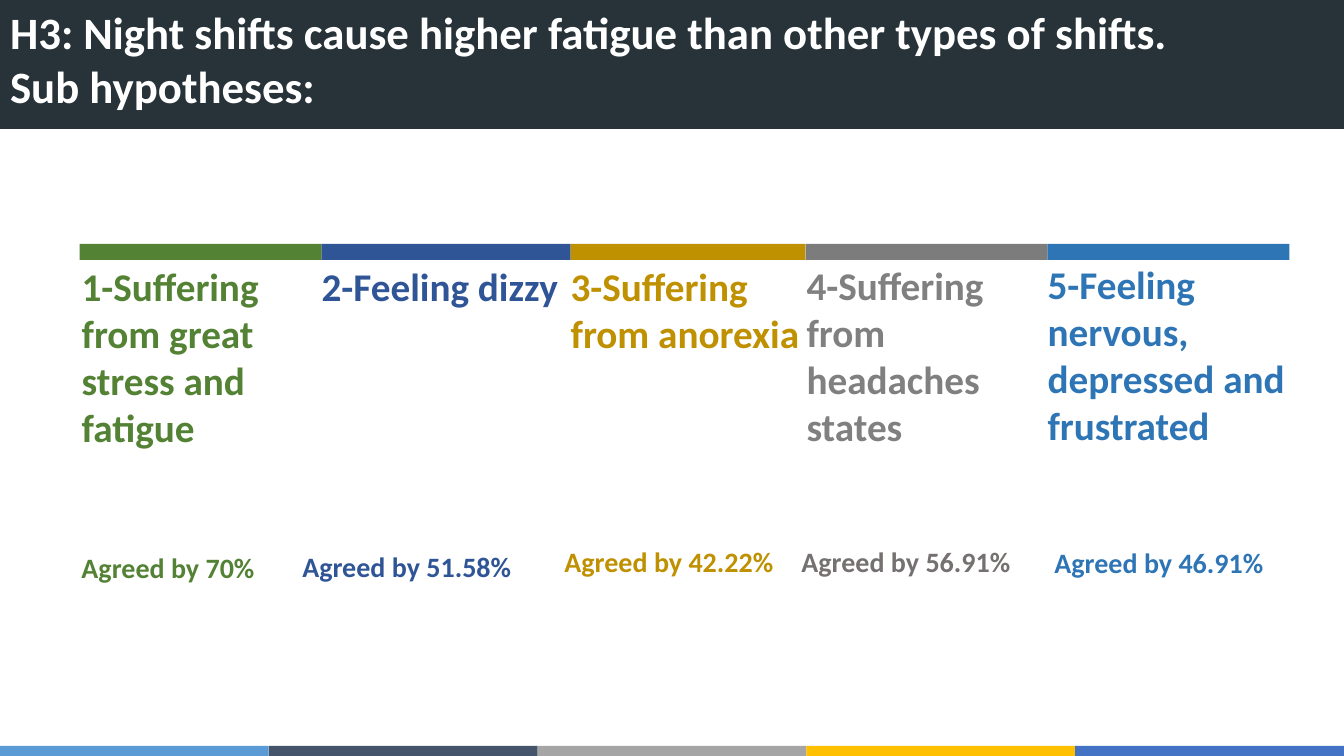
"""Build the slide on night-shift fatigue and its five sub hypotheses."""
import dataclasses
import itertools

import pptx
import pptx.dml.color
import pptx.enum.shapes
import pptx.enum.text
import pptx.util

Inches = pptx.util.Inches

HEADLINE = [
    "H3: Night shifts cause higher fatigue than other types of shifts.",
    "Sub hypotheses:",
]


@dataclasses.dataclass(frozen=True)
class Hypothesis:
    statement: str
    agreement: str
    color: str
    agreement_color: str
    bar_width: float
    statement_at: tuple
    statement_width: float
    agreement_at: tuple


HYPOTHESES = [
    Hypothesis("1-Suffering from great stress and fatigue", "Agreed by 70%",
               "548235", "548235", 2.4, (0.81, 2.6), 2.54, (0.71, 5.41)),
    Hypothesis("2-Feeling dizzy", "Agreed by 51.58%",
               "2F5597", "2F5597", 2.47, (3.19, 2.6), 2.59, (2.9, 5.4)),
    Hypothesis("3-Suffering from anorexia", "Agreed by 42.22%",
               "BF9000", "BF9000", 2.33, (5.66, 2.6), 2.43, (5.5, 5.35)),
    Hypothesis("4-Suffering from headaches states", "Agreed by 56.91%",
               "808080", "767171", 2.4, (8, 2.59), 2.67, (7.85, 5.35)),
    Hypothesis("5-Feeling nervous, depressed and frustrated", "Agreed by 46.91%",
               "2E75B6", "2E75B6", 2.4, (10.39, 2.58), 2.95, (10.36, 5.36)),
]


@dataclasses.dataclass(frozen=True)
class Theme:
    font: str = "Calibri"
    headline_size: int = 32
    statement_size: int = 28
    agreement_size: int = 20
    headline_color: str = "FFFFFF"
    banner: str = "273339"
    bar_colors: tuple = ("548235", "2F5597", "BF9000", "7C7C7C", "2E75B6")
    stripes: tuple = ("5B9BD5", "44546A", "A5A5A5", "FFC000", "4472C4")


THEME = Theme()
WIDTH, HEIGHT = 13.33, 7.5
STRIPE_HEIGHT = 0.1
BAR_LEFT, BAR_TOP, BAR_HEIGHT = 0.79, 2.42, 0.16
STATEMENT_INSETS = (0, 0, 0.13, 0)
STANDARD_INSETS = (0.1, 0.05, 0.1, 0.05)


def rgb(color):
    """Turn a hex string into a colour."""
    return pptx.dml.color.RGBColor.from_string(color)


def add_block(slide, left, top, width, height, color):
    """Add a plain filled rectangle."""
    block = slide.shapes.add_shape(
        pptx.enum.shapes.MSO_SHAPE.RECTANGLE,
        Inches(left), Inches(top), Inches(width), Inches(height))
    block.shadow.inherit = False
    block.fill.solid()
    block.fill.fore_color.rgb = rgb(color)
    block.line.fill.background()


def write(frame, lines, size, color, insets=STANDARD_INSETS):
    """Fill a text frame with bold, left-aligned lines."""
    frame.word_wrap = True
    frame.auto_size = pptx.enum.text.MSO_AUTO_SIZE.NONE
    frame.vertical_anchor = pptx.enum.text.MSO_ANCHOR.TOP
    (frame.margin_left, frame.margin_top,
     frame.margin_right, frame.margin_bottom) = map(Inches, insets)
    paragraph = frame.paragraphs[0]
    paragraph.alignment = pptx.enum.text.PP_ALIGN.LEFT
    for index, line in enumerate(lines):
        if index:
            paragraph.add_line_break()
        run = paragraph.add_run()
        run.text = line
        run.font.name = THEME.font
        run.font.size = pptx.util.Pt(size)
        run.font.bold = True
        run.font.color.rgb = rgb(color)


def add_label(slide, at, width, height, label, size, color, insets=STANDARD_INSETS):
    """Add a text box holding one label."""
    box = slide.shapes.add_textbox(
        Inches(at[0]), Inches(at[1]), Inches(width), Inches(height))
    write(box.text_frame, [label], size, color, insets)


def add_headline(slide):
    """Place the title over its dark banner."""
    add_block(slide, 0, 0, WIDTH, 1.28, THEME.banner)
    headline = slide.shapes.title
    headline.left, headline.top = Inches(0), Inches(0)
    headline.width, headline.height = Inches(WIDTH), Inches(1.18)
    write(headline.text_frame, HEADLINE, THEME.headline_size, THEME.headline_color)
    headline.element.getparent().append(headline.element)


def main():
    """Compose and save the slide."""
    deck = pptx.Presentation()
    deck.slide_width, deck.slide_height = Inches(WIDTH), Inches(HEIGHT)
    slide = deck.slides.add_slide(deck.slide_layouts.get_by_name("Title Only"))

    stripe_width = WIDTH / len(THEME.stripes)
    for index, color in enumerate(THEME.stripes):
        add_block(slide, index * stripe_width, HEIGHT - STRIPE_HEIGHT,
                  stripe_width, STRIPE_HEIGHT, color)
    add_headline(slide)

    bar_lefts = itertools.accumulate(
        (item.bar_width for item in HYPOTHESES), initial=BAR_LEFT)
    for item, bar_left, bar_color in zip(HYPOTHESES, bar_lefts, THEME.bar_colors):
        add_block(slide, bar_left, BAR_TOP, item.bar_width, BAR_HEIGHT, bar_color)
        add_label(slide, item.statement_at, item.statement_width, 1.99,
                  item.statement, THEME.statement_size, item.color, STATEMENT_INSETS)
        add_label(slide, item.agreement_at, 2.31, 0.77, item.agreement,
                  THEME.agreement_size, item.agreement_color)

    deck.save("out.pptx")


if __name__ == "__main__":
    main()
